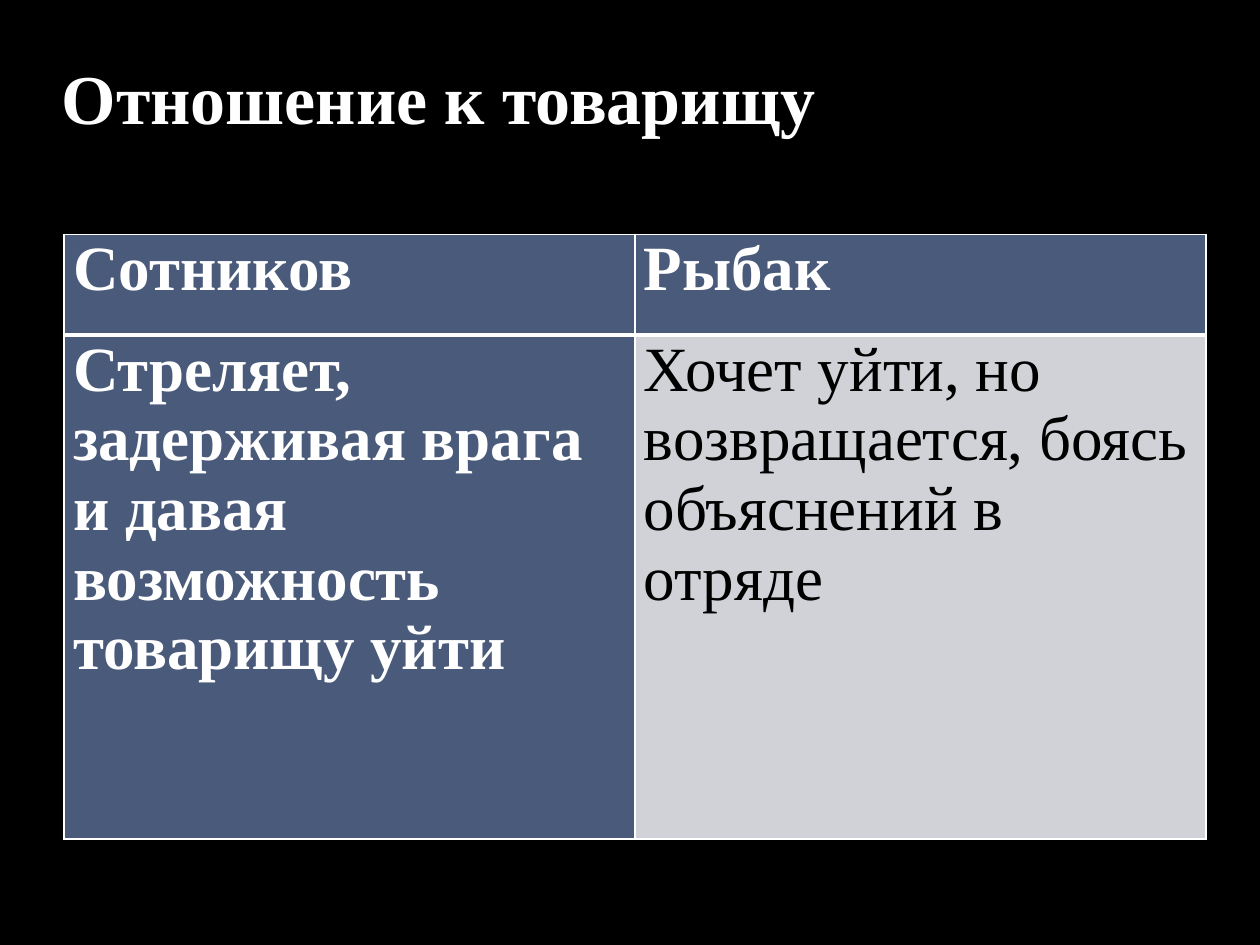
from dataclasses import dataclass

from lxml import etree
from pptx import Presentation
from pptx.dml.color import RGBColor
from pptx.enum import text
from pptx.oxml import ns
from pptx.util import Inches, Pt


@dataclass(frozen=True)
class Theme:
    font: str = "Times New Roman"
    background: str = "000000"
    light: str = "FFFFFF"
    dark: str = "000000"
    accent: str = "4A5A7A"
    pale: str = "D0D2D7"
    title_size: int = 40
    table_size: int = 36
    thin: int = 1
    thick: int = 3


THEME = Theme()
ROWS = [
    ("Сотников", "Рыбак"),
    ("Стреляет, задерживая врага и давая возможность товарищу уйти",
     "Хочет уйти, но возвращается, боясь объяснений в отряде"),
]


def style_text(frame, size, color, bold):
    paragraph = frame.paragraphs[0]
    paragraph.alignment = text.PP_ALIGN.LEFT
    for run in paragraph.runs:
        run.font.name = THEME.font
        run.font.size = Pt(size)
        run.font.bold = bold
        run.font.color.rgb = RGBColor.from_string(color)


def add_border(cell, side, width):
    properties = cell._tc.get_or_add_tcPr()
    line = etree.SubElement(properties, ns.qn(f"a:ln{side}"), w=str(Pt(width)))
    fill = etree.SubElement(line, ns.qn("a:solidFill"))
    etree.SubElement(fill, ns.qn("a:srgbClr"), val=THEME.light)


def add_title(slide, wording):
    title = slide.shapes.title
    title.left, title.top = Inches(0.39), Inches(0.25)
    title.width, title.height = Inches(8.4), Inches(0.9)
    frame = title.text_frame
    frame.text = wording
    frame.auto_size = text.MSO_AUTO_SIZE.NONE
    frame.vertical_anchor = text.MSO_ANCHOR.BOTTOM
    style_text(frame, THEME.title_size, THEME.light, True)


def fill_cell(cell, wording, is_header, is_label):
    cell.text = wording
    cell.margin_left = cell.margin_right = Inches(0.07)
    cell.margin_top = cell.margin_bottom = 0
    # The thick rule separates the header from the body
    add_border(cell, "L", THEME.thin)
    add_border(cell, "R", THEME.thin)
    add_border(cell, "T", THEME.thin if is_header else THEME.thick)
    add_border(cell, "B", THEME.thick if is_header else THEME.thin)
    strong = is_header or is_label
    cell.fill.solid()
    cell.fill.fore_color.rgb = RGBColor.from_string(
        THEME.accent if strong else THEME.pale)
    style_text(cell.text_frame, THEME.table_size,
               THEME.light if strong else THEME.dark, strong)


def add_comparison(slide, rows):
    table = slide.shapes.add_table(
        len(rows), len(rows[0]),
        Inches(0.51), Inches(1.86), Inches(9.06), Inches(4.8)).table
    for row, height in zip(table.rows, (0.8, 4)):
        row.height = Inches(height)
    for r, row in enumerate(rows):
        for c, wording in enumerate(row):
            fill_cell(table.cell(r, c), wording, r == 0, c == 0)


def main():
    presentation = Presentation()
    presentation.slide_width, presentation.slide_height = Inches(10), Inches(7.5)
    slide = presentation.slides.add_slide(presentation.slide_layouts[5])

    # Background
    slide.background.fill.solid()
    slide.background.fill.fore_color.rgb = RGBColor.from_string(THEME.background)

    # Heading and comparison of the two characters
    add_title(slide, "Отношение к товарищу")
    add_comparison(slide, ROWS)
    presentation.save("out.pptx")


if __name__ == "__main__":
    main()
